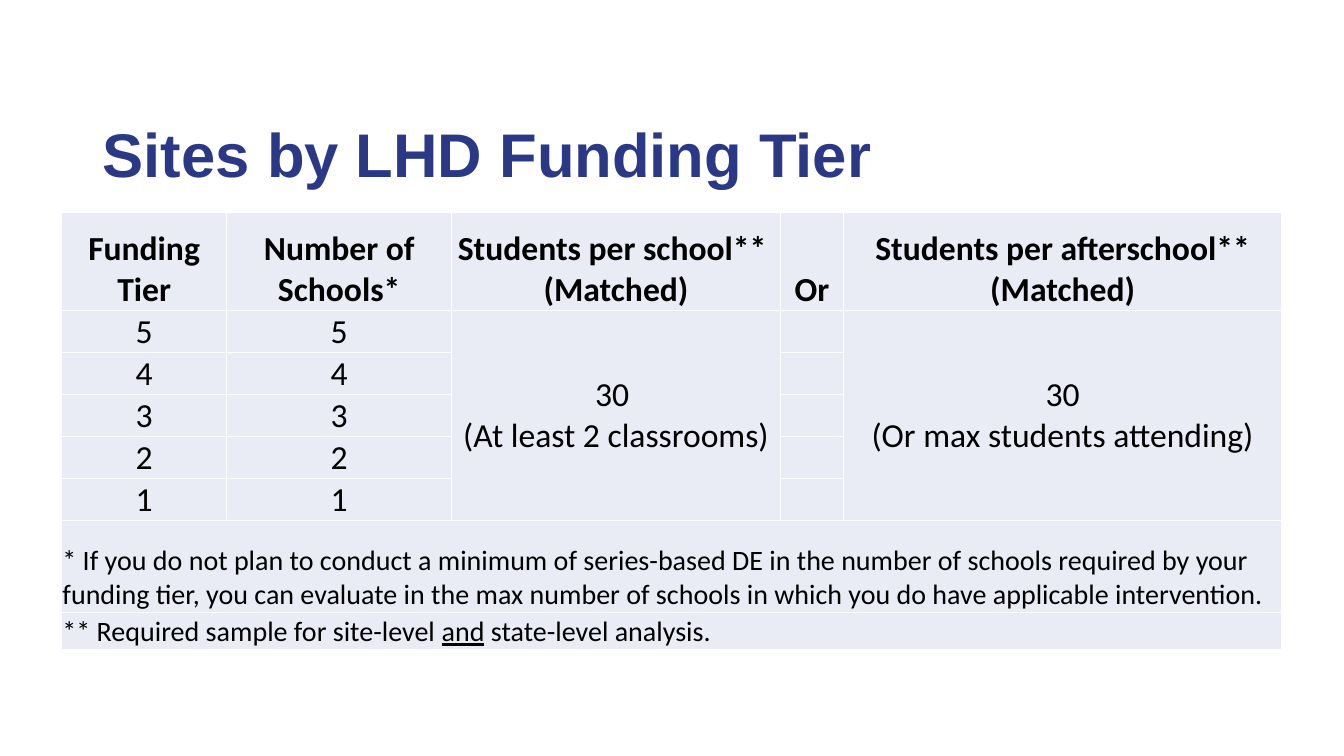
import pptx
import pptx.dml.color
import pptx.enum.text
import pptx.oxml
import pptx.oxml.ns
import pptx.util

PX = 9144  # EMU, 100 px to the inch
COLORS = {"title": "2B3885", "text": "000000", "cell": "E9EBF5", "border": "FFFFFF"}
COLUMN_WIDTHS = [164, 223, 326, 63, 434]
ROW_HEIGHTS = [97, 32, 32, 32, 32, 33, 91, 37]
HEADERS = [
    ["Funding Tier"],
    ["Number of Schools*"],
    ["Students per school** ", "(Matched)"],
    ["Or"],
    ["Students per afterschool** (Matched)"],
]
TIERS = ["5", "4", "3", "2", "1"]
SCHOOL_COLUMN, AFTERSCHOOL_COLUMN = 2, 4
SCHOOLS_NOTE = (
    "* If you do not plan to conduct a minimum of series-based DE in the number of "
    "schools required by your funding tier, you can evaluate in the max number of "
    "schools in which you do have applicable intervention."
)
ALIGN = pptx.enum.text.PP_ALIGN
ANCHOR = pptx.enum.text.MSO_ANCHOR


def px(length):
    return pptx.util.Emu(length * PX)


def color(name):
    return pptx.dml.color.RGBColor.from_string(COLORS[name])


def add_text(para, text, font="Calibri", size=24, fill="text", bold=False, underline=False):
    """Append a run; a newline in the text becomes a line break."""
    for index, line in enumerate(text.split("\n")):
        if index:
            para.add_line_break()
        span = para.add_run()
        span.text = line
        span.font.name = font
        span.font.size = pptx.util.Pt(size)
        span.font.bold = bold
        span.font.underline = underline
        span.font.color.rgb = color(fill)


def add_title(page, text):
    title = page.shapes.title
    title.left, title.top, title.width, title.height = px(92), px(84), px(1150), px(145)
    title.text_frame.vertical_anchor = ANCHOR.MIDDLE
    para = title.text_frame.paragraphs[0]
    para.alignment = ALIGN.LEFT
    para.line_spacing = 0.9
    add_text(para, text, font="Arial", size=44, fill="title", bold=True)


def style_cell(cell):
    cell.margin_left = cell.margin_right = cell.margin_top = px(1)
    cell.margin_bottom = 0
    cell.vertical_anchor = ANCHOR.BOTTOM
    properties = cell._tc.get_or_add_tcPr()
    for side in ("lnL", "lnR", "lnT", "lnB"):
        properties.append(pptx.oxml.parse_xml(
            f'<a:{side} {pptx.oxml.ns.nsdecls("a")} w="12700"><a:solidFill>'
            f'<a:srgbClr val="{COLORS["border"]}"/></a:solidFill></a:{side}>'
        ))
    cell.fill.solid()
    cell.fill.fore_color.rgb = color("cell")


def fill_cell(cell, lines, align=ALIGN.CENTER, **text_format):
    """Write each line as a paragraph."""
    for index, line in enumerate(lines):
        para = cell.text_frame.add_paragraph() if index else cell.text_frame.paragraphs[0]
        para.alignment = align
        add_text(para, line, **text_format)


def add_tier_table(page):
    frame = page.shapes.add_table(
        len(ROW_HEIGHTS), len(COLUMN_WIDTHS), px(61), px(211), px(1211), px(429)
    )
    table = frame.table
    table.first_row = table.horz_banding = False
    for column, width in zip(table.columns, COLUMN_WIDTHS):
        column.width = px(width)
    for row, height in zip(table.rows, ROW_HEIGHTS):
        row.height = px(height)
    frame.width, frame.height = px(1211), px(429)
    for cell in table.iter_cells():
        style_cell(cell)

    for column, lines in enumerate(HEADERS):
        fill_cell(table.cell(0, column), lines, bold=True)
    for row, tier in enumerate(TIERS, start=1):
        for column in range(2):
            fill_cell(table.cell(row, column), [tier])

    samples = {
        SCHOOL_COLUMN: "30 \n(At least 2 classrooms)",
        AFTERSCHOOL_COLUMN: "30\n(Or max students attending)",
    }
    for column, text in samples.items():
        cell = table.cell(1, column)
        cell.merge(table.cell(len(TIERS), column))
        cell.vertical_anchor = ANCHOR.MIDDLE
        fill_cell(cell, [text])

    schools_row, sample_row = len(TIERS) + 1, len(TIERS) + 2
    for row in (schools_row, sample_row):
        table.cell(row, 0).merge(table.cell(row, len(COLUMN_WIDTHS) - 1))
    fill_cell(table.cell(schools_row, 0), [SCHOOLS_NOTE], align=ALIGN.LEFT, size=20)
    sample_note = table.cell(sample_row, 0)
    fill_cell(sample_note, ["** Required sample for site-level "], align=ALIGN.LEFT, size=20)
    para = sample_note.text_frame.paragraphs[0]
    add_text(para, "and", size=20, underline=True)
    add_text(para, " state-level analysis.", size=20)


def main():
    deck = pptx.Presentation()
    deck.slide_width, deck.slide_height = px(1333), px(750)
    page = deck.slides.add_slide(deck.slide_layouts[5])
    add_title(page, "Sites by LHD Funding Tier")
    add_tier_table(page)
    deck.save("out.pptx")


if __name__ == "__main__":
    main()
